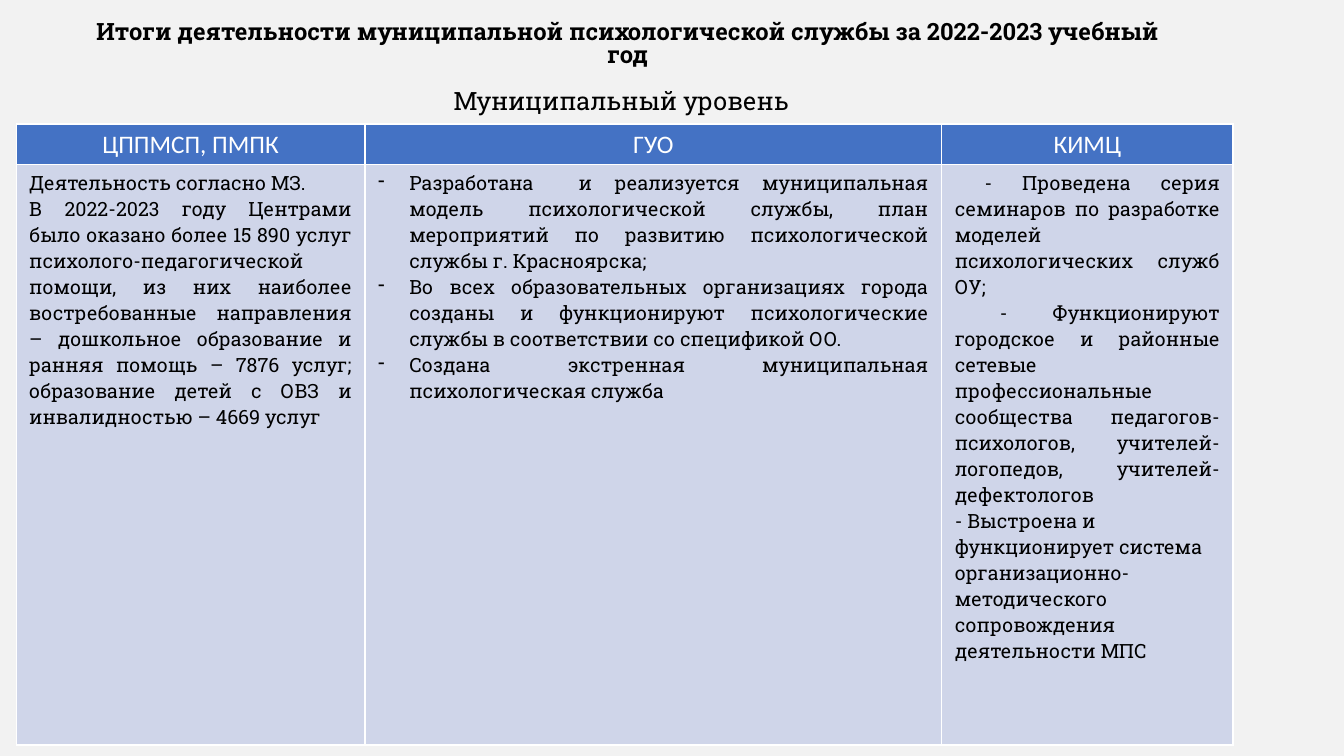
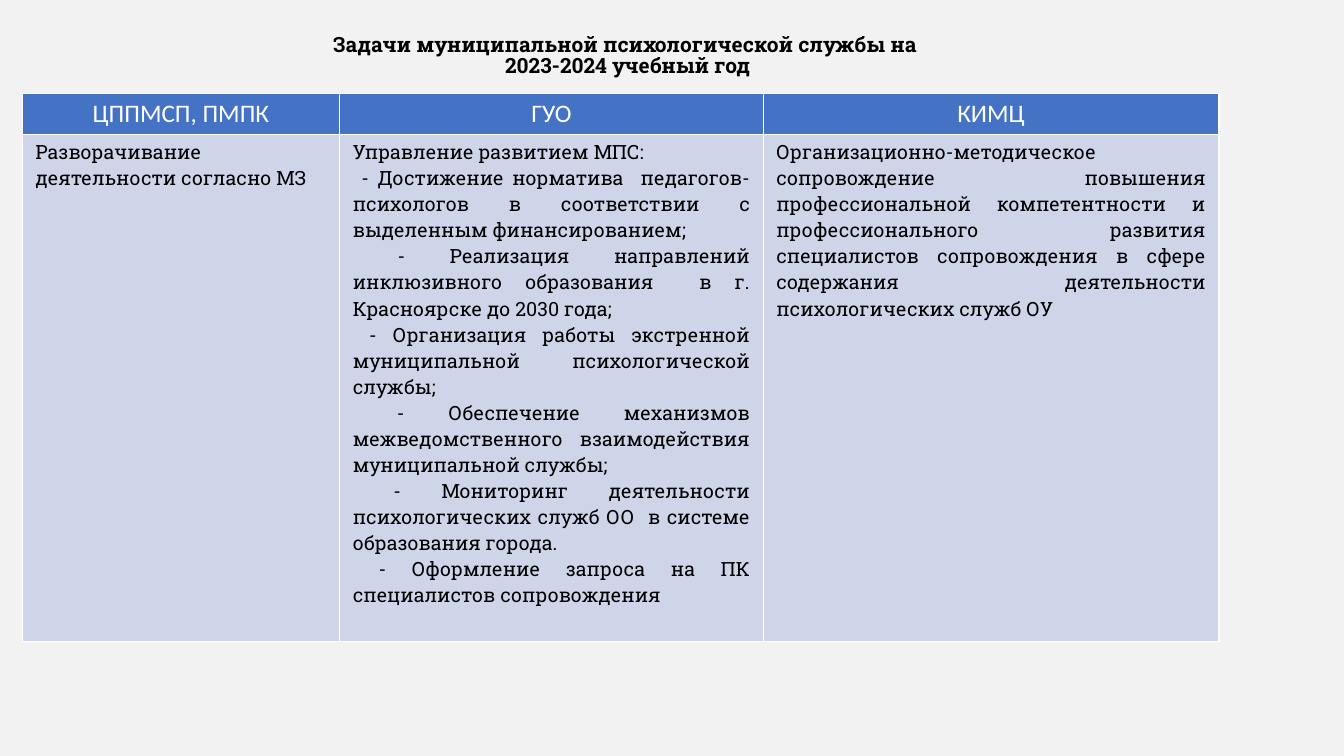
import lxml.etree
import pptx
import pptx.dml.color
import pptx.enum.text
import pptx.oxml.ns
import pptx.util

INK = pptx.dml.color.RGBColor(0x00, 0x00, 0x00)
WHITE = pptx.dml.color.RGBColor(0xFF, 0xFF, 0xFF)
PAPER = pptx.dml.color.RGBColor(0xF2, 0xF2, 0xF2)
HEADER_BLUE = pptx.dml.color.RGBColor(0x44, 0x72, 0xC4)
CELL_BLUE = pptx.dml.color.RGBColor(0xCF, 0xD5, 0xE9)

ALIGN = pptx.enum.text.PP_ALIGN
ANCHOR = pptx.enum.text.MSO_ANCHOR
JUSTIFIED, BULLETED, LEFT = "justified", "bulleted", "left"

DEPARTMENTS = ["ЦППМСП, ПМПК", "ГУО", "КИМЦ"]

RESULTS = [
    [
        ("Деятельность согласно МЗ.", JUSTIFIED),
        ("В 2022-2023 году Центрами было оказано более 15 890 услуг "
         "психолого-педагогической помощи, из них наиболее востребованные "
         "направления – дошкольное образование и ранняя помощь – 7876 услуг; "
         "образование детей с ОВЗ и инвалидностью – 4669 услуг", JUSTIFIED),
    ],
    [
        ("Разработана  и реализуется муниципальная модель психологической "
         "службы, план мероприятий по развитию психологической службы "
         "г. Красноярска;", BULLETED),
        ("Во всех образовательных организациях города созданы и "
         "функционируют психологические службы в соответствии со "
         "спецификой ОО.", BULLETED),
        ("Создана экстренная муниципальная психологическая служба", BULLETED),
    ],
    [
        (" - Проведена серия семинаров по разработке моделей "
         "психологических служб ОУ;", JUSTIFIED),
        (" - Функционируют городское и районные сетевые профессиональные "
         "сообщества педагогов-психологов, учителей-логопедов, "
         "учителей-дефектологов", JUSTIFIED),
        ("- Выстроена и функционирует система "
         "организационно-методического сопровождения деятельности МПС", LEFT),
    ],
]

TASKS = [
    [("Разворачивание деятельности согласно МЗ", JUSTIFIED)],
    [
        ("Управление развитием МПС:", JUSTIFIED),
        (" - Достижение норматива  педагогов-психологов в соответствии с "
         "выделенным финансированием;", JUSTIFIED),
        (" - Реализация направлений инклюзивного образования  в "
         "г. Красноярске до 2030 года;", JUSTIFIED),
        (" - Организация работы экстренной муниципальной психологической "
         "службы;", JUSTIFIED),
        (" - Обеспечение механизмов межведомственного взаимодействия "
         "муниципальной службы;", JUSTIFIED),
        (" - Мониторинг деятельности психологических служб ОО  в системе "
         "образования города.", JUSTIFIED),
        (" - Оформление запроса на ПК специалистов сопровождения", JUSTIFIED),
    ],
    [
        ("Организационно-методическое сопровождение повышения "
         "профессиональной компетентности и профессионального развития "
         "специалистов сопровождения в сфере содержания деятельности "
         "психологических служб ОУ", JUSTIFIED),
    ],
]


class Deck:
    text_font = "Roboto Slab"
    header_font = "Calibri"
    title_left, title_width = 5.03, 83.35
    header_height = 5.33

    def __init__(self):
        self.presentation = pptx.Presentation()
        self.presentation.slide_width = pptx.util.Inches(13.33)
        self.presentation.slide_height = pptx.util.Inches(7.5)
        self.slide = None

    def across(self, percent):
        return round(self.presentation.slide_width * percent / 100)

    def down(self, percent):
        return round(self.presentation.slide_height * percent / 100)

    def add_slide(self):
        blank = self.presentation.slide_layouts[6]
        self.slide = self.presentation.slides.add_slide(blank)
        fill = self.slide.background.fill
        fill.solid()
        fill.fore_color.rgb = PAPER

    def format_runs(self, paragraph, size, color=INK, name=text_font, bold=False):
        for run in paragraph.runs:
            run.font.size = pptx.util.Pt(size)
            run.font.name = name
            run.font.bold = bold
            run.font.color.rgb = color

    def heading(self, text, left, top, width, height, size, spacing, bold=False):
        shape = self.slide.shapes.add_textbox(
            self.across(left), self.down(top),
            self.across(width), self.down(height))
        text_frame = shape.text_frame
        text_frame.word_wrap = True
        text_frame.vertical_anchor = ANCHOR.MIDDLE if bold else ANCHOR.TOP
        text_frame.text = text
        paragraph = text_frame.paragraphs[0]
        paragraph.alignment = ALIGN.CENTER
        paragraph.line_spacing = spacing
        self.format_runs(paragraph, size, bold=bold)

    def title(self, text, top, height, size, spacing):
        self.heading(text, self.title_left, top, self.title_width, height,
                     size, spacing, bold=True)

    def subtitle(self, text):
        self.heading(text, 2.78, 11.07, 86.87, 5.33, 18, 0.9)

    def add_child(self, parent, tag, **attributes):
        return lxml.etree.SubElement(parent, pptx.oxml.ns.qn(tag), attributes)

    def add_bullet(self, paragraph):
        properties = paragraph._p.get_or_add_pPr()
        indent = pptx.util.Inches(0.31)
        properties.set("marL", str(indent))
        properties.set("indent", str(-indent))
        color = self.add_child(properties, "a:buClr")
        self.add_child(color, "a:srgbClr", val=str(INK))
        self.add_child(properties, "a:buChar", char="-")

    def style_cell(self, cell, color):
        properties = cell._tc.get_or_add_tcPr()
        for side in ("a:lnL", "a:lnR", "a:lnT", "a:lnB"):
            border = self.add_child(properties, side,
                                    w=str(pptx.util.Pt(0.96)))
            fill = self.add_child(border, "a:solidFill")
            self.add_child(fill, "a:srgbClr", val=str(WHITE))
        cell.fill.solid()
        cell.fill.fore_color.rgb = color
        cell.margin_left = cell.margin_right = pptx.util.Inches(0.13)
        cell.margin_top = cell.margin_bottom = pptx.util.Inches(0.05)

    def fill_header(self, cell, text):
        self.style_cell(cell, HEADER_BLUE)
        cell.text_frame.text = text
        paragraph = cell.text_frame.paragraphs[0]
        paragraph.alignment = ALIGN.CENTER
        self.format_runs(paragraph, 18, WHITE, self.header_font)

    def fill_body(self, cell, entries):
        self.style_cell(cell, CELL_BLUE)
        text_frame = cell.text_frame
        text_frame.text = "\n".join(text for text, style in entries)
        for paragraph, (text, style) in zip(text_frame.paragraphs, entries):
            if style == BULLETED:
                self.add_bullet(paragraph)
            paragraph.alignment = ALIGN.LEFT if style == LEFT else ALIGN.JUSTIFY
            self.format_runs(paragraph, 14)

    def table(self, left, top, widths, body_height, contents):
        heights = [self.header_height, body_height]
        table = self.slide.shapes.add_table(
            len(heights), len(widths), self.across(left), self.down(top),
            self.across(sum(widths)), self.down(sum(heights))).table
        for row, height in zip(table.rows, heights):
            row.height = self.down(height)
        for index, width in enumerate(widths):
            table.columns[index].width = self.across(width)
            self.fill_header(table.cell(0, index), DEPARTMENTS[index])
            self.fill_body(table.cell(1, index), contents[index])


def main():
    deck = Deck()

    deck.add_slide()
    deck.title("Итоги деятельности муниципальной психологической службы "
               "за 2022-2023 учебный год", 2, 8, 17, 0.8)
    deck.subtitle("Муниципальный уровень")
    deck.table(1.2, 16.4, [25.96, 42.91, 21.68], 76.8, RESULTS)

    deck.add_slide()
    deck.title("Задачи муниципальной психологической службы на \v"
               "2023-2024 учебный год", 4, 7.07, 15, 0.83)
    deck.table(1.65, 12.4, [23.63, 31.51, 33.91], 67.07, TASKS)

    deck.presentation.save("out.pptx")


if __name__ == "__main__":
    main()
